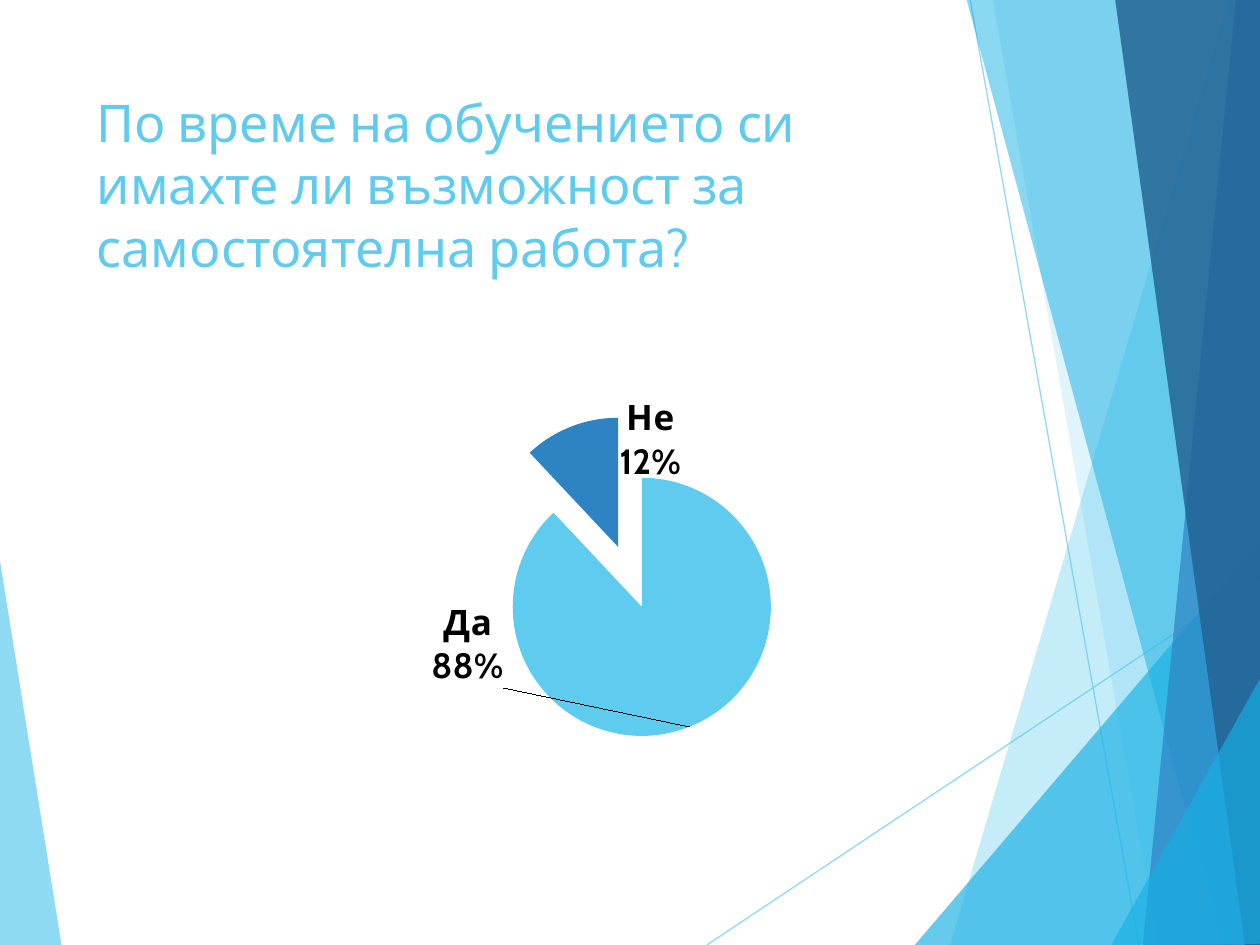
from dataclasses import dataclass

from lxml import etree
from pptx import Presentation
from pptx import util as u
from pptx.chart import data
from pptx.dml.color import RGBColor
from pptx.enum import chart as ch
from pptx.enum import shapes, text
from pptx.oxml import ns

SKY = RGBColor(0x5F, 0xCB, 0xEF)
CYAN = RGBColor(0x17, 0xB0, 0xE4)
BLUE = RGBColor(0x2E, 0x83, 0xC3)
NAVY = RGBColor(0x22, 0x62, 0x92)
BLACK = RGBColor(0, 0, 0)
FONT = "Cabin"
TITLE = "По време на обучението си имахте ли възможност за самостоятелна работа?"


@dataclass(frozen=True)
class Facet:
    points: tuple[tuple[float, float], ...]
    color: RGBColor
    opacity: int


@dataclass(frozen=True)
class Ray:
    start: tuple[float, float]
    end: tuple[float, float]


@dataclass(frozen=True)
class Slice:
    name: str
    value: int
    color: RGBColor
    label_shift: tuple[float, float]


LEFT_FACET = Facet(((-0.01, 4.39), (0.49, 7.51), (-0.01, 7.5)), SKY, 70)
RAYS = (Ray((5.61, 7.5), (10.01, 4.57)), Ray((7.7, 0), (9.04, 7.5)))
RIGHT_FACETS = (
    Facet(((9.75, 0), (7.54, 7.5), (10.02, 7.51), (10.01, 0.01)), SKY, 36),
    Facet(((7.88, -0.01), (9.19, 7.5), (10.01, 7.5), (10.01, -0.01)), SKY, 20),
    Facet(((7.26, 7.5), (10, 4.29), (10.01, 7.5)), CYAN, 66),
    Facet(((7.67, -0.01), (9.7, 7.5), (10.01, 7.49), (10.01, -0.01)), CYAN, 50),
    Facet(((9.81, -0.01), (9.07, 7.5), (10.01, 7.5), (10, -0.01)), BLUE, 70),
    Facet(((8.85, -0.01), (9.88, 7.5), (10.02, 7.5), (10, -0.01)), NAVY, 82),
    Facet(((8.82, 7.5), (10.02, 5.35), (10.02, 7.49)), CYAN, 66),
)
SLICES = (
    Slice("Да", 88, SKY, (-0.23, -0.25)),
    Slice("Не", 12, BLUE, (0.1, 0.12)),
)


def set_opacity(shape, percent: int) -> None:
    color = shape._element.spPr.find(".//" + ns.qn("a:srgbClr"))
    etree.SubElement(color, ns.qn("a:alpha"), val=str(percent * 1000))


def draw_facet(page, facet: Facet) -> None:
    corners = [(round(x * 100), round(y * 100)) for x, y in facet.points]
    builder = page.shapes.build_freeform(*corners[0], scale=u.Inches(0.01))
    builder.add_line_segments(corners[1:], close=True)
    shape = builder.convert_to_shape()
    shape.shadow.inherit = False
    shape.fill.solid()
    shape.fill.fore_color.rgb = facet.color
    shape.line.fill.background()
    set_opacity(shape, facet.opacity)


def draw_ray(page, ray: Ray) -> None:
    ends = [u.Inches(value) for value in (*ray.start, *ray.end)]
    line = page.shapes.add_connector(shapes.MSO_CONNECTOR.STRAIGHT, *ends)
    line.line.color.rgb = SKY
    line.line.width = u.Pt(0.75)
    set_opacity(line, 70)
    etree.SubElement(line._element.spPr, ns.qn("a:effectLst"))


def draw_title(page) -> None:
    box = page.shapes.add_textbox(
        u.Inches(0.67), u.Inches(0.67), u.Inches(6.94), u.Inches(1.44))
    frame = box.text_frame
    frame.word_wrap = True
    frame.vertical_anchor = text.MSO_ANCHOR.TOP
    frame.text = TITLE
    span = frame.paragraphs[0].runs[0]
    span.font.name = FONT
    span.font.size = u.Pt(29.7)
    span.font.color.rgb = SKY


def manual_layout(**values: str | float):
    layout = etree.Element(ns.qn("c:layout"))
    manual = etree.SubElement(layout, ns.qn("c:manualLayout"))
    for name, value in values.items():
        etree.SubElement(manual, ns.qn("c:" + name), val=str(value))
    return layout


def style_font(font) -> None:
    font.name = FONT
    font.size = u.Pt(20)
    font.bold = True
    font.color.rgb = BLACK


def show_share(element) -> None:
    for name, shown in (("showVal", "0"), ("showCatName", "1"), ("showPercent", "1")):
        element.find(ns.qn("c:" + name)).set("val", shown)
    separator = etree.Element(ns.qn("c:separator"))
    separator.text = "\n"
    flags = element.findall(ns.qn("c:showBubbleSize")) or element.findall(ns.qn("c:showPercent"))
    flags[-1].addnext(separator)


def style_slice(series, index: int, piece: Slice) -> None:
    point = series.points[index]
    point.format.fill.solid()
    point.format.fill.fore_color.rgb = piece.color
    point.format.line.fill.background()
    label = point.data_label
    style_font(label.font)
    label.position = ch.XL_LABEL_POSITION.OUTSIDE_END
    element = series._element.findall(".//" + ns.qn("c:dLbl"))[index]
    shift_x, shift_y = piece.label_shift
    layout = manual_layout(x=shift_x, y=shift_y)
    element.find(ns.qn("c:idx")).addnext(layout)
    layout.addnext(etree.Element(ns.qn("c:numFmt"), formatCode="0%", sourceLinked="0"))
    show_share(element)


def draw_pie(page) -> None:
    answers = data.CategoryChartData()
    answers.categories = [piece.name for piece in SLICES]
    answers.add_series("Series 1", [piece.value for piece in SLICES])
    chart = page.shapes.add_chart(
        ch.XL_CHART_TYPE.PIE, u.Inches(0.5), u.Inches(2.5),
        u.Inches(9), u.Inches(4.2), answers).chart
    chart.has_legend = False
    chart.has_title = False
    chart.font.name = FONT
    chart.font.size = u.Pt(10)
    chart.font.color.rgb = BLACK
    plot = chart.plots[0]
    plot.vary_by_categories = True
    series = plot.series[0]
    labels = series.data_labels
    style_font(labels.font)
    labels.number_format = "0%"
    labels.number_format_is_linked = False
    labels.position = ch.XL_LABEL_POSITION.OUTSIDE_END
    show_share(labels._element)
    for index, piece in enumerate(SLICES):
        style_slice(series, index, piece)
    series._element.find(ns.qn("c:dPt")).addprevious(
        etree.Element(ns.qn("c:explosion"), val="25"))
    area = chart._chartSpace.find(".//" + ns.qn("c:plotArea"))
    for old in area.findall(ns.qn("c:layout")):
        area.remove(old)
    area.insert(0, manual_layout(
        layoutTarget="inner", xMode="edge", yMode="edge",
        x=0.35, y=0.19, w=0.3, h=0.61))


def main() -> None:
    deck = Presentation()
    deck.slide_width, deck.slide_height = u.Inches(10), u.Inches(7.5)
    page = deck.slides.add_slide(deck.slide_layouts[6])
    draw_facet(page, LEFT_FACET)
    for ray in RAYS:
        draw_ray(page, ray)
    for facet in RIGHT_FACETS:
        draw_facet(page, facet)
    draw_title(page)
    draw_pie(page)
    deck.save("out.pptx")


if __name__ == "__main__":
    main()
